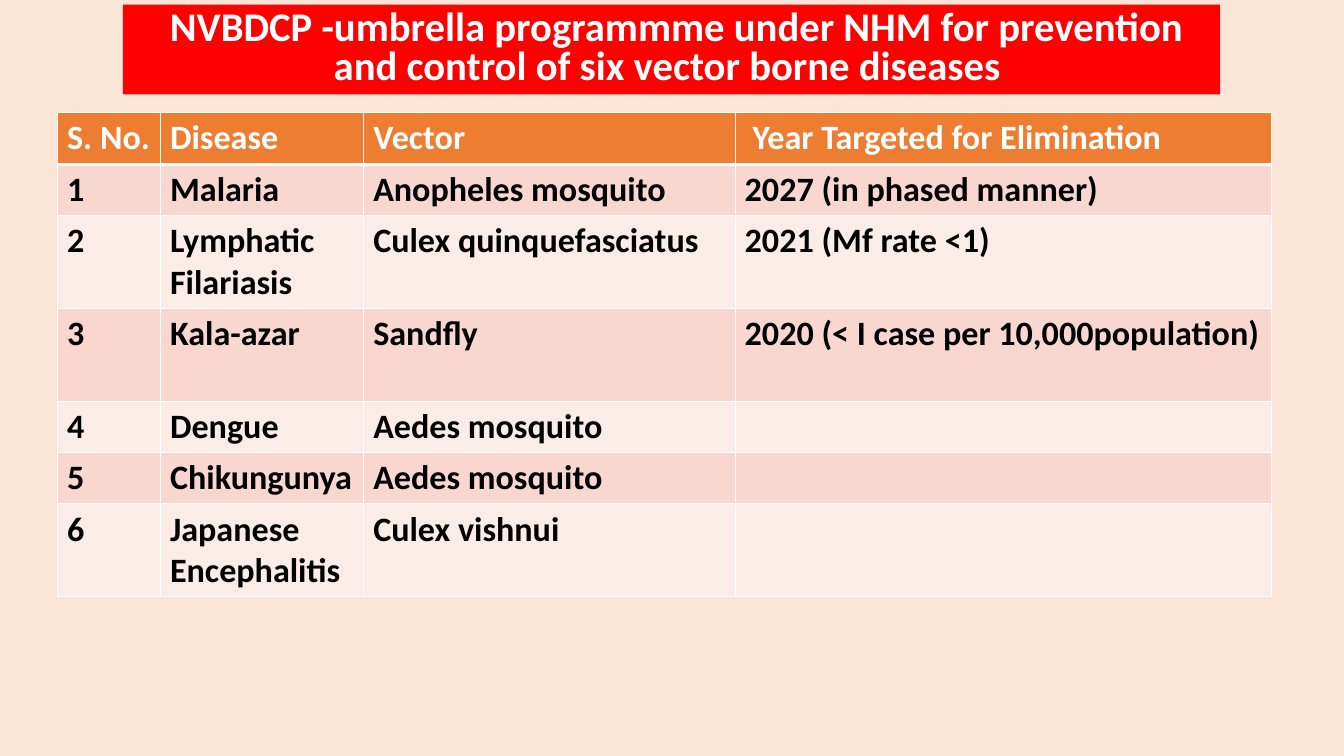
import pptx
import pptx.dml.color
import pptx.enum.text
import pptx.oxml.ns
import pptx.util
from lxml import etree
from pptx.util import Inches

TITLE_FORMAT = {"name": "Calibri", "size": pptx.util.Pt(31), "bold": True}
CELL_FORMAT = {"name": "Calibri", "size": pptx.util.Pt(26), "bold": True}

HEADERS = ["S. No.", "Disease", "Vector", " Year Targeted for Elimination"]
DISEASES = [
    ["1", "Malaria", "Anopheles mosquito", "2027 (in phased manner)"],
    ["2", "Lymphatic\nFilariasis", "Culex quinquefasciatus", "2021 (Mf rate <1)"],
    ["3", "Kala-azar", "Sandfly", "2020 (< I case per 10,000population)"],
    ["4", "Dengue", "Aedes mosquito", ""],
    ["5", "Chikungunya", "Aedes mosquito", ""],
    ["6", "Japanese\nEncephalitis", "Culex vishnui", ""],
]
COLUMN_WIDTHS = [1.09, 2.15, 3.93, 5.67]
ROW_HEIGHTS = [0.55, 0.54, 0.98, 0.98, 0.54, 0.54, 0.98]


def color(hex_value):
    return pptx.dml.color.RGBColor.from_string(hex_value)


def set_fill(fill, hex_value):
    fill.solid()
    fill.fore_color.rgb = color(hex_value)


def format_font(font, values, hex_value):
    for name, value in values.items():
        setattr(font, name, value)
    font.color.rgb = color(hex_value)


def set_borders(cell, bottom_points):
    """Draw white lines around a cell; they must precede its fill."""
    properties = cell._tc.get_or_add_tcPr()
    widths = {"lnL": 1, "lnR": 1, "lnT": 1, "lnB": bottom_points}
    for position, (tag, points) in enumerate(widths.items()):
        line = etree.Element(pptx.oxml.ns.qn("a:" + tag), w=str(pptx.util.Pt(points)))
        solid = etree.SubElement(line, pptx.oxml.ns.qn("a:solidFill"))
        etree.SubElement(solid, pptx.oxml.ns.qn("a:srgbClr"), val="FFFFFF")
        properties.insert(position, line)


def add_title(slide, left, top, width, height):
    title = slide.shapes.title
    title.left, title.top, title.width, title.height = left, top, width, height
    set_fill(title.fill, "FF0000")
    frame = title.text_frame
    frame.text = (" NVBDCP -umbrella programmme under NHM for prevention "
                  "and control of six vector borne diseases ")
    frame.word_wrap = True
    frame.auto_size = pptx.enum.text.MSO_AUTO_SIZE.NONE
    frame.vertical_anchor = pptx.enum.text.MSO_ANCHOR.MIDDLE
    paragraph = frame.paragraphs[0]
    paragraph.alignment = pptx.enum.text.PP_ALIGN.CENTER
    paragraph.line_spacing = 0.8
    format_font(paragraph.runs[0].font, TITLE_FORMAT, "FFFFFF")


def add_disease_table(slide, left, top, width, height):
    rows = [HEADERS] + DISEASES
    table = slide.shapes.add_table(
        len(rows), len(HEADERS), left, top, width, height).table
    for column, column_width in zip(table.columns, COLUMN_WIDTHS):
        column.width = Inches(column_width)
    for row, row_height in zip(table.rows, ROW_HEIGHTS):
        row.height = Inches(row_height)

    # Header row, then alternating bands
    for row_index, values in enumerate(rows):
        is_header = row_index == 0
        band = "ED7D31" if is_header else ("FCECE8", "F8D7CE")[row_index % 2]
        for column_index, text in enumerate(values):
            cell = table.cell(row_index, column_index)
            set_fill(cell.fill, band)
            set_borders(cell, 3 if is_header else 1)
            if not text:
                continue
            cell.text = text
            for paragraph in cell.text_frame.paragraphs:
                format_font(paragraph.runs[0].font, CELL_FORMAT,
                            "FFFFFF" if is_header else "000000")


def main():
    presentation = pptx.Presentation()
    presentation.slide_width = Inches(14.22)
    presentation.slide_height = Inches(8)

    # Title-only slide
    slide = presentation.slides.add_slide(presentation.slide_layouts[5])
    set_fill(slide.background.fill, "FBE5D6")
    add_title(slide, Inches(1.3), Inches(0.05), Inches(11.61), Inches(0.95))
    add_disease_table(slide, Inches(0.61), Inches(1.19),
                      Inches(sum(COLUMN_WIDTHS)), Inches(sum(ROW_HEIGHTS)))
    presentation.save("out.pptx")


if __name__ == "__main__":
    main()
